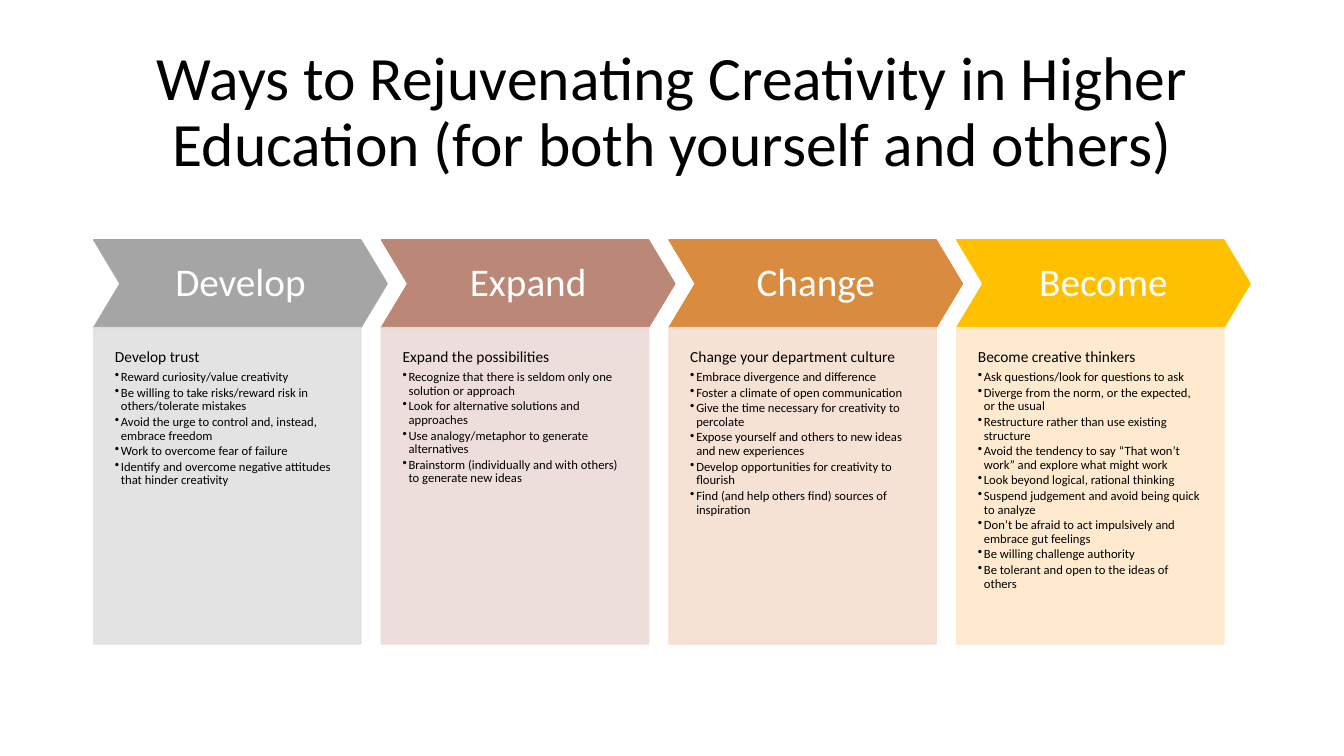
from lxml.etree import SubElement
from pptx import Presentation
from pptx.dml.color import RGBColor
from pptx.enum.shapes import MSO_SHAPE as Kind
from pptx.enum.text import MSO_ANCHOR as Anchor, PP_ALIGN as Align
from pptx.oxml.ns import qn
from pptx.util import Inches, Pt

TITLE = "Ways to Rejuvenating Creativity in Higher Education (for both yourself and others)"
BLACK = RGBColor(0x00, 0x00, 0x00)
WHITE = RGBColor(0xFF, 0xFF, 0xFF)
GRAY = RGBColor(0xA5, 0xA5, 0xA5)
ROSE = RGBColor(0xBB, 0x87, 0x76)
ORANGE = RGBColor(0xD9, 0x8B, 0x3F)
GOLD = RGBColor(0xFF, 0xC0, 0x00)
PALE_GRAY = RGBColor(0xE1, 0xE1, 0xE1)
PALE_ROSE = RGBColor(0xEC, 0xDB, 0xD9)
PALE_ORANGE = RGBColor(0xF6, 0xDE, 0xD1)
PALE_GOLD = RGBColor(0xFF, 0xE8, 0xCB)

STAGES = [
    ("Develop", GRAY, PALE_GRAY, "Develop trust", [
        "Reward curiosity/value creativity",
        "Be willing to take risks/reward risk in others/tolerate mistakes",
        "Avoid the urge to control and, instead, embrace freedom",
        "Work to overcome fear of failure",
        "Identify and overcome negative attitudes that hinder creativity",
    ]),
    ("Expand", ROSE, PALE_ROSE, "Expand the possibilities", [
        "Recognize that there is seldom only one solution or approach",
        "Look for alternative solutions and approaches",
        "Use analogy/metaphor to generate alternatives",
        "Brainstorm (individually and with others) to generate new ideas",
    ]),
    ("Change", ORANGE, PALE_ORANGE, "Change your department culture", [
        "Embrace divergence and difference",
        "Foster a climate of open communication",
        "Give the time necessary for creativity to percolate",
        "Expose yourself and others to new ideas and new experiences",
        "Develop opportunities for creativity to flourish",
        "Find (and help others find) sources of inspiration",
    ]),
    ("Become", GOLD, PALE_GOLD, "Become creative thinkers", [
        "Ask questions/look for questions to ask",
        "Diverge from the norm, or the expected, or the usual",
        "Restructure rather than use existing structure",
        "Avoid the tendency to say “That won’t work” and explore what might work",
        "Look beyond logical, rational thinking",
        "Suspend judgement and avoid being quick to analyze",
        "Don’t be afraid to act impulsively and embrace gut feelings",
        "Be willing challenge authority",
        "Be tolerant and open to the ideas of others",
    ]),
]

LEFT, STEP = 0.93, 2.853
HEAD_TOP, HEAD_W, HEAD_H = 2.38, 2.91, 0.87
BODY_TOP, BODY_W, BODY_H = HEAD_TOP + HEAD_H, 2.65, 3.14
INDENT = 0.06

HEAD_FRAME = {"word_wrap": True, "vertical_anchor": Anchor.MIDDLE}
HEAD_FRAME.update({f"margin_{side}": Inches(0.11) for side in ("left", "top", "right", "bottom")})
BODY_FRAME = {"word_wrap": True, "vertical_anchor": Anchor.TOP, "margin_bottom": Inches(0.42)}
BODY_FRAME.update({f"margin_{side}": Inches(0.21) for side in ("left", "top", "right")})
TITLE_PARA = {"alignment": Align.CENTER, "line_spacing": 0.9}
LEAD_PARA = {"alignment": Align.LEFT, "line_spacing": 0.9, "space_after": Pt(3.85)}
ITEM_PARA = {**LEAD_PARA, "level": 1, "space_after": Pt(1.35)}


def apply(target, values):
    """Set each named attribute on the target."""
    for name, value in values.items():
        setattr(target, name, value)


def write(para, text, form, size, color, bullet=False):
    """Fill and format one paragraph."""
    para.text = text
    apply(para, form)
    if bullet:
        props = para._p.get_or_add_pPr()
        props.set("marL", str(Inches(INDENT)))
        props.set("indent", str(-Inches(INDENT)))
        SubElement(props, qn("a:buChar")).set("char", "•")
    for font in (para.font, para.runs[0].font):
        apply(font, {"name": "Calibri", "size": Pt(size)})
        font.color.rgb = color


def add_block(slide, kind, box, color, frame, alpha=None):
    """Add a filled shape and return it."""
    shape = slide.shapes.add_shape(kind, *map(Inches, box))
    shape.shadow.inherit = False
    shape.line.width = Pt(1)
    for fill in (shape.fill, shape.line.fill):
        fill.solid()
        fill.fore_color.rgb = color
    if alpha:
        for tone in shape._element.spPr.iter(qn("a:srgbClr")):
            SubElement(tone, qn("a:alpha")).set("val", str(alpha * 1000))
    apply(shape.text_frame, frame)
    return shape


def main():
    """Build the slide and save it."""
    deck = Presentation()
    apply(deck, {"slide_width": Inches(13.33), "slide_height": Inches(7.5)})
    slide = deck.slides.add_slide(deck.slide_layouts[5])
    title = slide.shapes.title
    apply(title, {"left": Inches(0.92), "top": Inches(0.4),
                  "width": Inches(11.5), "height": Inches(1.45)})
    title.text_frame.vertical_anchor = Anchor.MIDDLE
    write(title.text_frame.paragraphs[0], TITLE, TITLE_PARA, 44, BLACK)

    for col, (name, color, pale, lead, items) in enumerate(STAGES):
        left = LEFT + col * STEP
        head = add_block(slide, Kind.CHEVRON, (left, HEAD_TOP, HEAD_W, HEAD_H), color, HEAD_FRAME)
        head.adjustments[0] = 0.3
        write(head.text_frame.paragraphs[0], name, TITLE_PARA, 28, WHITE)

        body = add_block(slide, Kind.RECTANGLE, (left, BODY_TOP, BODY_W, BODY_H),
                         pale, BODY_FRAME, alpha=90)
        write(body.text_frame.paragraphs[0], lead, LEAD_PARA, 11, BLACK)
        for item in items:
            write(body.text_frame.add_paragraph(), item, ITEM_PARA, 9, BLACK, bullet=True)

    deck.save("out.pptx")


if __name__ == "__main__":
    main()
